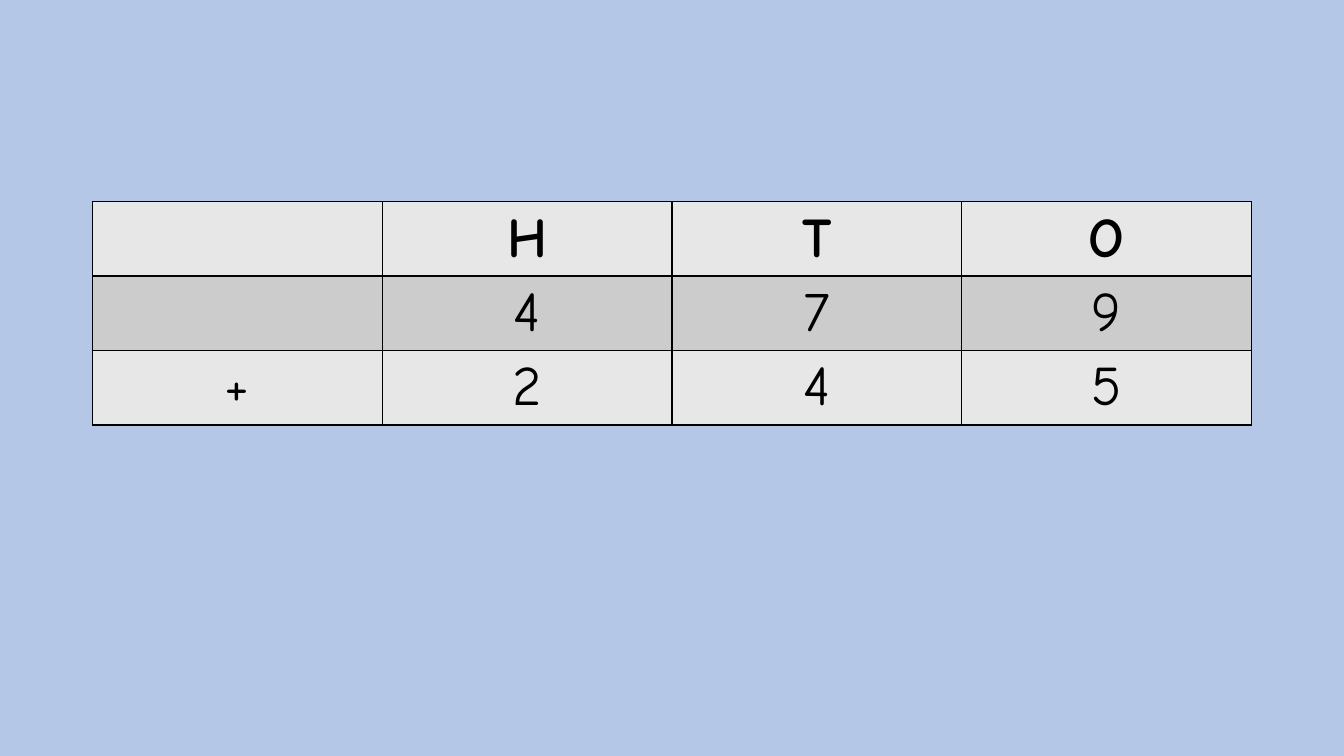
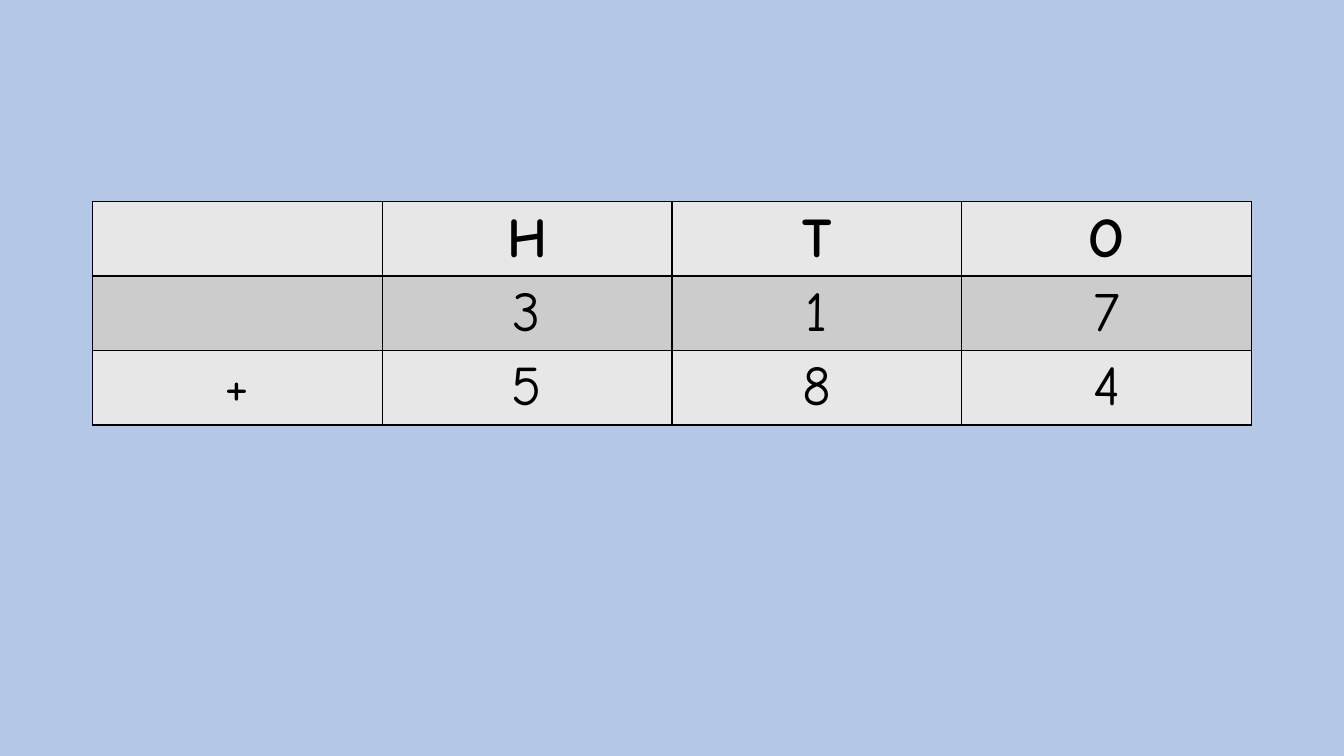
from lxml.etree import SubElement
from pptx import Presentation
from pptx.dml.color import RGBColor
from pptx.enum.text import PP_ALIGN
from pptx.oxml.ns import qn
from pptx.util import Pt

# Shared style
BACKGROUND, INK = "B4C7E7", "000000"
ROW_FILLS = ["E7E7E7", "CCCCCC"]
FONT = {"name": "Comic Neue", "size": Pt(40)}
PAGE_WIDTH, PAGE_HEIGHT = 960, 540
TABLE_LEFT, TABLE_TOP = 66, 144
ROW_HEIGHT = 53.1
BORDER_WIDTH = 1

# Content
HEADINGS = ["", "H", "T", "O"]
SUMS = [("479", "245"), ("317", "584")]


def set_fill(fill, colour):
    fill.solid()
    fill.fore_color.rgb = RGBColor.from_string(colour)


def add_borders(cell):
    properties = cell._tc.get_or_add_tcPr()
    for side in ("lnL", "lnR", "lnT", "lnB"):
        line = SubElement(properties, qn(f"a:{side}"), w=str(Pt(BORDER_WIDTH)))
        solid = SubElement(line, qn("a:solidFill"))
        SubElement(solid, qn("a:srgbClr"), val=INK)


def format_cell(cell, text, fill, bold):
    add_borders(cell)
    set_fill(cell.fill, fill)
    if not text:
        return
    para = cell.text_frame.paragraphs[0]
    para.alignment = PP_ALIGN.CENTER
    span = para.add_run()
    span.text = text
    for name, value in {**FONT, "bold": bold}.items():
        setattr(span.font, name, value)
    set_fill(span.font.fill, INK)


def add_sum_table(page, first, second):
    rows = [HEADINGS, ["", *first], ["+", *second]]
    table = page.shapes.add_table(
        len(rows), len(HEADINGS), Pt(TABLE_LEFT), Pt(TABLE_TOP),
        Pt(PAGE_WIDTH - 2 * TABLE_LEFT), Pt(ROW_HEIGHT * len(rows))).table
    for row_index, texts in enumerate(rows):
        fill = ROW_FILLS[row_index % len(ROW_FILLS)]
        for column_index, text in enumerate(texts):
            format_cell(table.cell(row_index, column_index), text, fill,
                        bold=row_index == 0)


def main():
    deck = Presentation()
    deck.slide_width, deck.slide_height = Pt(PAGE_WIDTH), Pt(PAGE_HEIGHT)
    set_fill(deck.slide_master.background.fill, BACKGROUND)
    blank_layout = deck.slide_layouts.get_by_name("Blank")

    # One column addition per slide
    for first, second in SUMS:
        page = deck.slides.add_slide(blank_layout)
        add_sum_table(page, first, second)

    deck.save("out.pptx")


if __name__ == "__main__":
    main()
